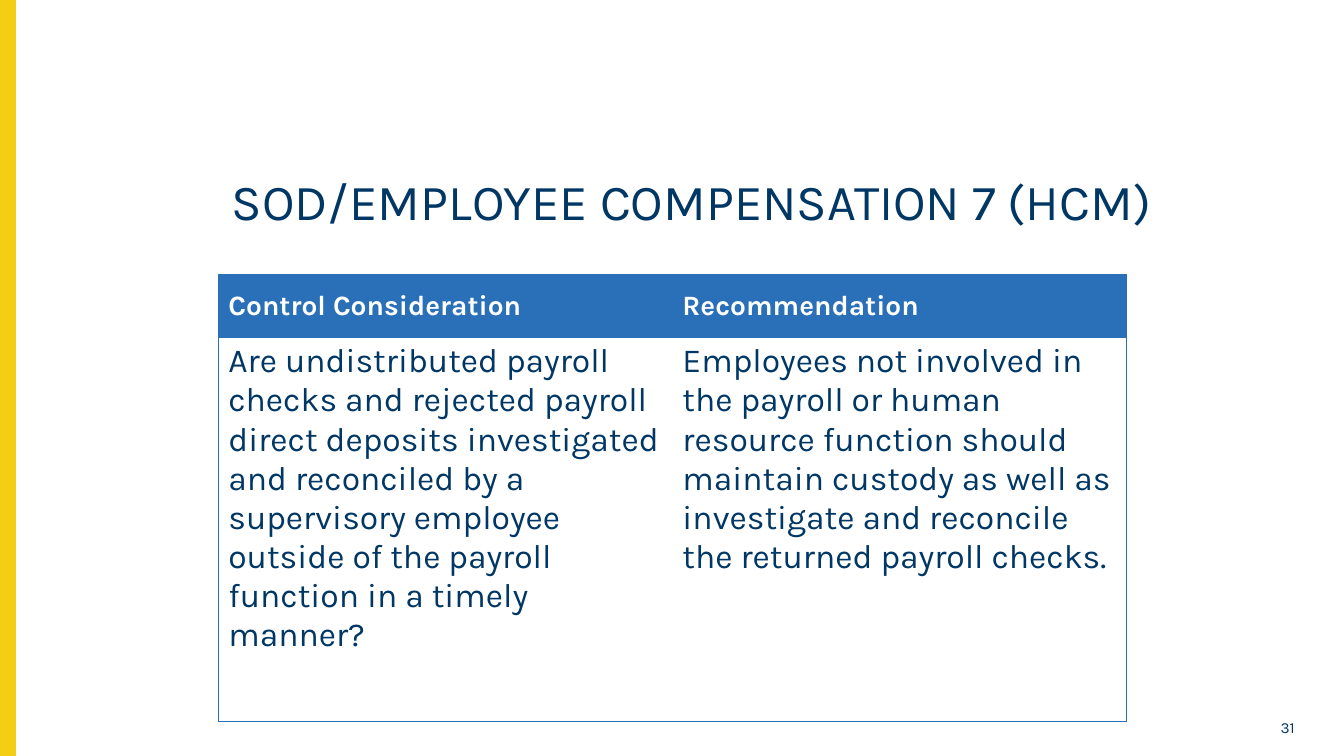
from lxml import etree
from pptx import Presentation
from pptx.dml.color import RGBColor
from pptx.enum.shapes import MSO_SHAPE
from pptx.enum.text import MSO_ANCHOR, PP_ALIGN
from pptx.oxml.ns import qn
from pptx.util import Cm, Pt

RECT = MSO_SHAPE.RECTANGLE
TOP, MIDDLE = MSO_ANCHOR.TOP, MSO_ANCHOR.MIDDLE
CENTER, RIGHT = PP_ALIGN.CENTER, PP_ALIGN.RIGHT
FONT = "Karla"
NAVY, BLUE, GOLD, WHITE = "003764", "2A70B8", "F4CE12", "FFFFFF"

HEADS = ["Control Consideration", "Recommendation"]
BODY = [
    "Are undistributed payroll checks and rejected payroll direct deposits "
    "investigated and reconciled by a supervisory employee outside of the "
    "payroll function in a timely manner?",
    "Employees not involved in the payroll or human resource function should "
    "maintain custody as well as investigate and reconcile the returned "
    "payroll checks.",
]


def color(code):
    return RGBColor.from_string(code)


def write(frame, text, size, code, bold=False, align=None):
    frame.text = text
    par = frame.paragraphs[0]
    par.alignment = align
    font = par.runs[0].font
    font.name, font.size, font.bold = FONT, Pt(size), bold
    font.color.rgb = color(code)
    return par


def add_bar(slide, left, top, width, height):
    bar = slide.shapes.add_shape(RECT, left, top, width, height)
    bar.shadow.inherit = False
    bar.fill.solid()
    bar.fill.fore_color.rgb = color(GOLD)
    bar.line.color.rgb = color(GOLD)
    bar.line.width = Pt(1)


def add_title(slide, left, top, width, height):
    title = slide.shapes.title
    title.left, title.top, title.width, title.height = left, top, width, height
    frame = title.text_frame
    frame.vertical_anchor = TOP
    par = write(frame, "SOD/EMPLOYEE COMPENSATION 7 (HCM)", 36, NAVY, align=CENTER)
    par.line_spacing = 0.9


def set_edge(cell, side, shown):
    props = cell._tc.get_or_add_tcPr()
    line = etree.SubElement(props, qn(f"a:ln{side}"), w=str(Pt(0.5)))
    if shown:
        fill = etree.SubElement(line, qn("a:solidFill"))
        etree.SubElement(fill, qn("a:srgbClr"), val=BLUE)
    else:
        etree.SubElement(line, qn("a:noFill"))


def add_grid(slide, left, top, width, height):
    table = slide.shapes.add_table(2, 2, left, top, width, height).table
    table.first_row = table.horz_banding = False
    head = Cm(1.57)
    table.rows[0].height, table.rows[1].height = head, height - head
    # Header: size, text colour, fill, bold, anchor; then body
    looks = [(20, WHITE, BLUE, True, MIDDLE), (24, NAVY, WHITE, False, TOP)]
    for row, (texts, look) in enumerate(zip([HEADS, BODY], looks)):
        size, ink, back, bold, anchor = look
        for col, text in enumerate(texts):
            cell = table.cell(row, col)
            write(cell.text_frame, text, size, ink, bold)
            cell.vertical_anchor = anchor
            # Every edge but the one between the columns
            for side, shown in zip("LRTB", [col == 0, col == 1, True, True]):
                set_edge(cell, side, shown)
            cell.fill.solid()
            cell.fill.fore_color.rgb = color(back)


def add_number(slide, left, top, width, height):
    frame = slide.shapes.add_textbox(left, top, width, height).text_frame
    frame.word_wrap = True
    frame.vertical_anchor = MIDDLE
    write(frame, "31", 11, NAVY, align=RIGHT)


def main():
    deck = Presentation()
    deck.slide_width, deck.slide_height = Cm(33.86), Cm(19.05)
    slide = deck.slides.add_slide(deck.slide_layouts[5])
    add_bar(slide, 0, 0, Cm(0.38), deck.slide_height)
    add_title(slide, Cm(1.98), Cm(4.32), Cm(30.89), Cm(2.21))
    add_grid(slide, Cm(5.5), Cm(6.92), Cm(22.88), Cm(11.25))
    add_number(slide, Cm(31.14), Cm(18), Cm(1.73), Cm(0.66))
    deck.save("out.pptx")


if __name__ == "__main__":
    main()
